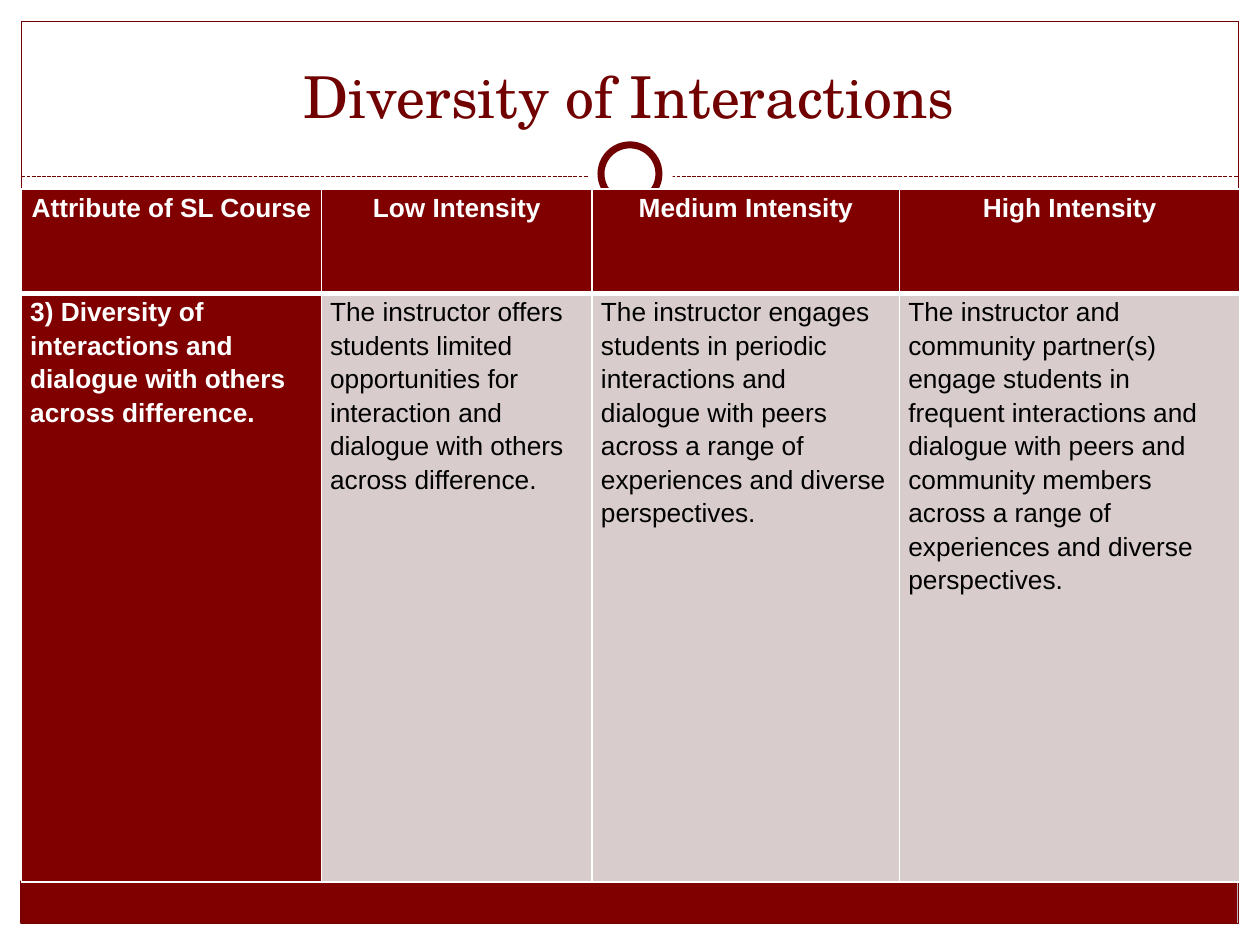
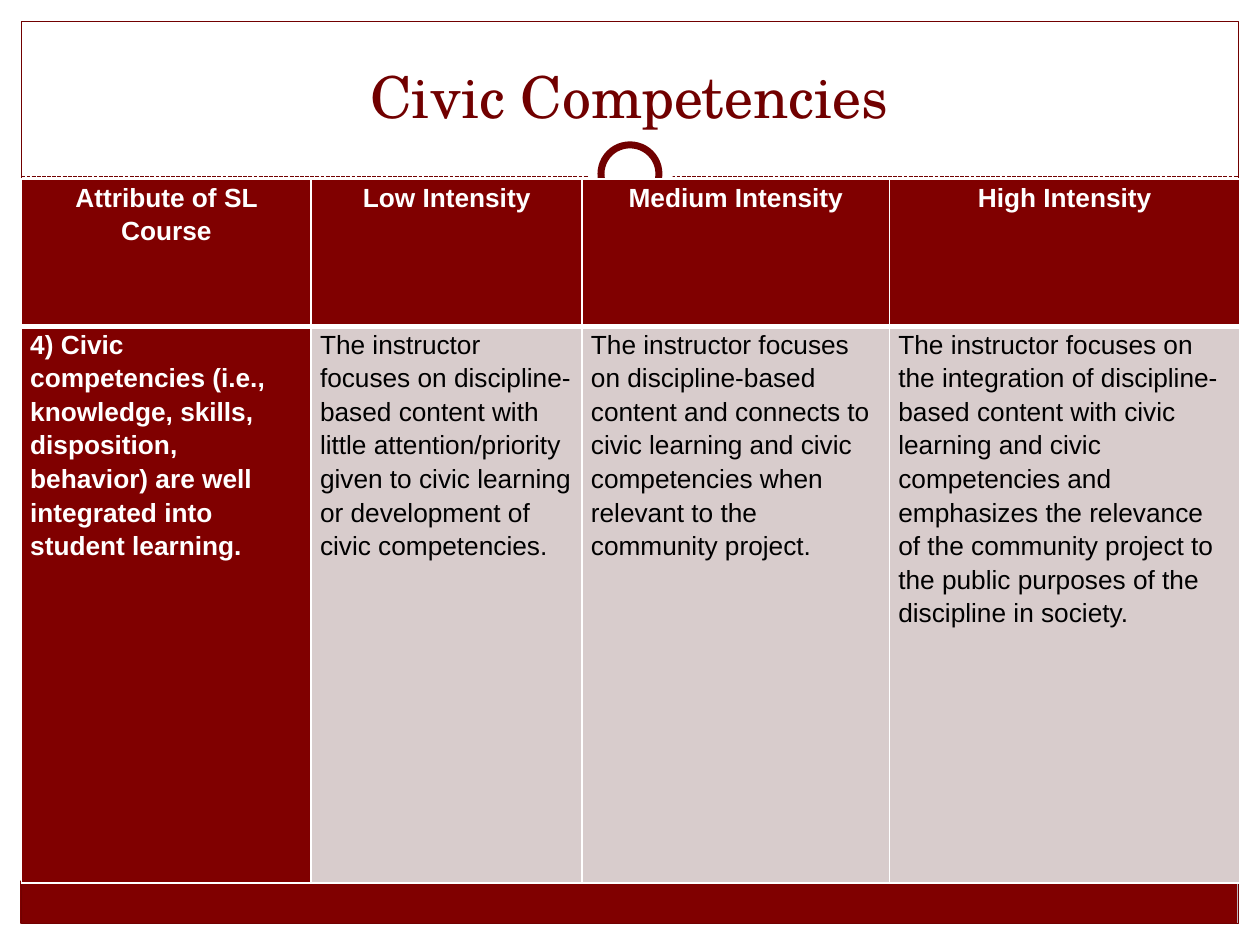
from lxml.etree import SubElement
from pptx import Presentation
from pptx.dml.color import RGBColor
from pptx.enum.dml import MSO_LINE
from pptx.enum.shapes import MSO_CONNECTOR, MSO_SHAPE
from pptx.enum.text import MSO_ANCHOR, PP_ALIGN
from pptx.oxml.ns import qn
from pptx.util import Inches, Pt

COLORS = {"back": "C5D1D7", "white": "FFFFFF", "band": "800000",
          "dark": "710000", "cell": "D8CCCC", "ink": "000000"}
HEADS = ["Attribute of SL Course", "Low Intensity", "Medium Intensity", "High Intensity"]
PAGES = [
    {"title": "Diversity of Interactions", "top": 1.5,
     "cols": [2.38, 2.15, 2.44, 2.7], "rows": [0.83, 4.67],
     "body": [
         "3) Diversity of interactions and dialogue with others across difference.",
         "The instructor offers students limited opportunities for interaction and "
         "dialogue with others across difference.",
         "The instructor engages students in periodic interactions and dialogue with "
         "peers across a range of experiences and diverse perspectives.",
         "The instructor and community partner(s) engage students in frequent "
         "interactions and dialogue with peers and community members across a range "
         "of experiences and diverse perspectives."]},
    {"title": "Civic Competencies", "top": 1.42,
     "cols": [2.3, 2.15, 2.44, 2.78], "rows": [1.17, 4.42],
     "body": [
         "4) Civic competencies (i.e., knowledge, skills, disposition, behavior) are "
         "well integrated into student learning.",
         "The instructor focuses on discipline-based content with little "
         "attention/priority given to civic learning or development of civic competencies.",
         "The instructor focuses on discipline-based content and connects to civic "
         "learning and civic competencies when relevant to the community project.",
         "The instructor focuses on the integration of discipline-based content with "
         "civic learning and civic competencies and emphasizes the relevance of the "
         "community project to the public purposes of the discipline in society."]},
]


def color(name):
    return RGBColor.from_string(COLORS[name])


def write(frame, text, size=15, font="Arial", ink="ink", bold=False,
          align=PP_ALIGN.LEFT, space=1.15):
    frame.word_wrap = True
    para = frame.paragraphs[0]
    para.alignment = align
    para.line_spacing = space
    run = para.add_run()
    run.text = text
    run.font.size = Pt(size)
    run.font.name = font
    run.font.bold = bold
    run.font.color.rgb = color(ink)


class Deck:
    """Holds the shared style and the current slide."""

    def __init__(self):
        self.file = Presentation()
        self.file.slide_width = Inches(10)
        self.file.slide_height = Inches(7.5)
        self.slide = None

    def start(self):
        self.slide = self.file.slides.add_slide(self.file.slide_layouts[6])
        fill = self.slide.background.fill
        fill.solid()
        fill.fore_color.rgb = color("back")

    def shape(self, box, fill=None, line=None, width=0.75, kind=MSO_SHAPE.RECTANGLE):
        item = self.slide.shapes.add_shape(kind, *map(Inches, box))
        item.shadow.inherit = False
        if fill:
            item.fill.solid()
            item.fill.fore_color.rgb = color(fill)
        else:
            item.fill.background()
        if line:
            item.line.color.rgb = color(line)
            item.line.width = Pt(width)
        else:
            item.line.fill.background()

    def rule(self, left, right, top):
        item = self.slide.shapes.add_connector(
            MSO_CONNECTOR.STRAIGHT, Inches(left), Inches(top), Inches(right), Inches(top))
        item.line.color.rgb = color("dark")
        item.line.width = Pt(0.75)
        item.line.dash_style = MSO_LINE.SQUARE_DOT
        SubElement(item.element.spPr, qn("a:effectLst"))

    def frame(self):
        for box in [(0, 7.33, 10, 0.17), (0, 0, 10, 1.52),
                    (0, 0, 0.17, 7.5), (9.83, 0, 0.17, 7.5)]:
            self.shape(box, "white")
        self.shape((0.16, 6.99, 9.66, 0.34), "band")
        self.shape((0.17, 0.17, 9.66, 7.16), line="dark")
        self.rule(0.17, 9.83, 1.4)
        self.shape((4.67, 1.05, 0.67, 0.67), "white", kind=MSO_SHAPE.OVAL)
        self.shape((4.77, 1.15, 0.46, 0.46), "white", "dark", 4, MSO_SHAPE.OVAL)

    def title(self, text):
        box = self.slide.shapes.add_textbox(*map(Inches, (0.33, 0.25, 9.33, 0.83)))
        box.text_frame.vertical_anchor = MSO_ANCHOR.BOTTOM
        write(box.text_frame, text, size=33, font="TeX Gyre Schola", ink="dark",
              align=PP_ALIGN.CENTER, space=1)

    def cell(self, cell, text, fill, edges, **style):
        cell.margin_left = cell.margin_right = Inches(0.07)
        cell.margin_top = cell.margin_bottom = 0
        write(cell.text_frame, text, **style)
        props = cell._tc.get_or_add_tcPr()
        for side, width in edges.items():
            edge = SubElement(props, qn("a:ln" + side), w=str(Pt(width)))
            paint = SubElement(edge, qn("a:solidFill"))
            SubElement(paint, qn("a:srgbClr"), val=COLORS["white"])
        cell.fill.solid()
        cell.fill.fore_color.rgb = color(fill)

    def table(self, top, cols, rows, body):
        box = map(Inches, (0.17, top, sum(cols), sum(rows)))
        table = self.slide.shapes.add_table(len(rows), len(cols), *box).table
        for col, width in zip(table.columns, cols):
            col.width = Inches(width)
        for row, height in zip(table.rows, rows):
            row.height = Inches(height)
        for r, texts in enumerate([HEADS, body]):
            head = r == 0
            edges = {"L": 1, "R": 1, "T": 1 if head else 3, "B": 3 if head else 1}
            for c, text in enumerate(texts):
                key = head or c == 0
                self.cell(table.cell(r, c), text, "band" if key else "cell", edges,
                          ink="white" if key else "ink", bold=key,
                          align=PP_ALIGN.CENTER if head else PP_ALIGN.LEFT)


def main():
    deck = Deck()
    for page in PAGES:
        deck.start()
        deck.frame()
        deck.title(page["title"])
        deck.table(page["top"], page["cols"], page["rows"], page["body"])
    deck.file.save("out.pptx")


if __name__ == "__main__":
    main()
